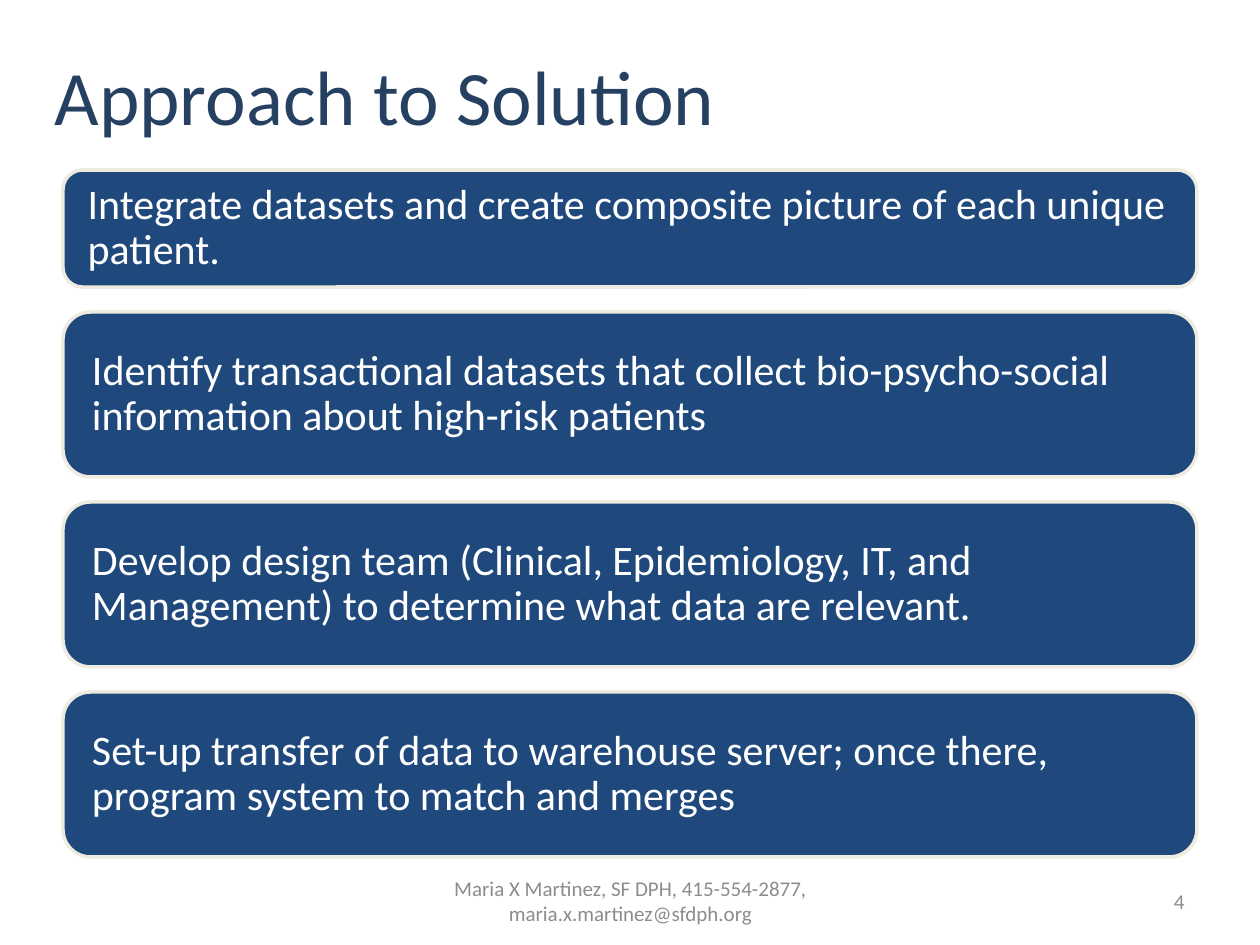
"""Build the slide on the approach to a solution."""
import pptx
import pptx.util
import pptx.dml.color
import pptx.enum.shapes
import pptx.enum.text

TITLE = "Approach to Solution"
STEPS = [
    ("Integrate datasets and create composite picture of each unique patient.", 117, 19),
    ("Identify transactional datasets that collect bio-psycho-social information about high-risk patients", 165, 21),
    ("Develop design team (Clinical, Epidemiology, IT, and Management) to determine what data are relevant.", 165, 21),
    ("Set-up transfer of data to warehouse server; once there, program system to match and merges", 165, 21),
]
ALIGN = pptx.enum.text.PP_ALIGN
NOTES = [
    ("4", 903, 294, ALIGN.RIGHT),
    ("Maria X Martinez, SF DPH, 415-554-2877, maria.x.martinez@sfdph.org", 431, 399, ALIGN.CENTER),
]
LEFT, TOP, WIDTH, GAP = 63, 170, 1134, 25


def px(num):
    return pptx.util.Emu(round(num * 914400 / 126))


def tint(code):
    return pptx.dml.color.RGBColor.from_string(code)


def write(shape, text, size, color, align=ALIGN.LEFT):
    frame = shape.text_frame
    frame.text = text
    frame.word_wrap = True
    frame.vertical_anchor = pptx.enum.text.MSO_ANCHOR.MIDDLE
    para = frame.paragraphs[0]
    para.alignment = align
    para.font.name = "Calibri"
    para.font.size = pptx.util.Pt(size)
    para.font.color.rgb = tint(color)
    return frame


def add_step(shapes, text, top, high, inset):
    kind = pptx.enum.shapes.MSO_SHAPE.ROUNDED_RECTANGLE
    card = shapes.add_shape(kind, px(LEFT), px(top), px(WIDTH), px(high))
    card.shadow.inherit = False
    card.fill.solid()
    card.fill.fore_color.rgb = tint("1F497D")
    card.line.color.rgb = tint("EEECE1")
    card.line.width = pptx.util.Pt(2)
    frame = write(card, text, 24, "FFFFFF")
    frame.margin_left = frame.margin_right = px(inset)
    frame.margin_top = frame.margin_bottom = px(inset)
    frame.paragraphs[0].line_spacing = 0.9


def main():
    deck = pptx.Presentation()
    deck.slide_width, deck.slide_height = px(1260), px(945)
    slide = deck.slides.add_slide(deck.slide_layouts[5])
    shapes = slide.shapes

    title = shapes.title
    title.left, title.top, title.width, title.height = map(px, (42, 42, 1134, 105))
    write(title, TITLE, 44, "254061")

    top = TOP
    for text, high, inset in STEPS:
        add_step(shapes, text, top, high, inset)
        top += high + GAP

    for text, left, width, align in NOTES:
        box = shapes.add_textbox(px(left), px(876), px(width), px(50))
        write(box, text, 12, "8C8C8C", align)

    deck.save("out.pptx")


if __name__ == "__main__":
    main()
